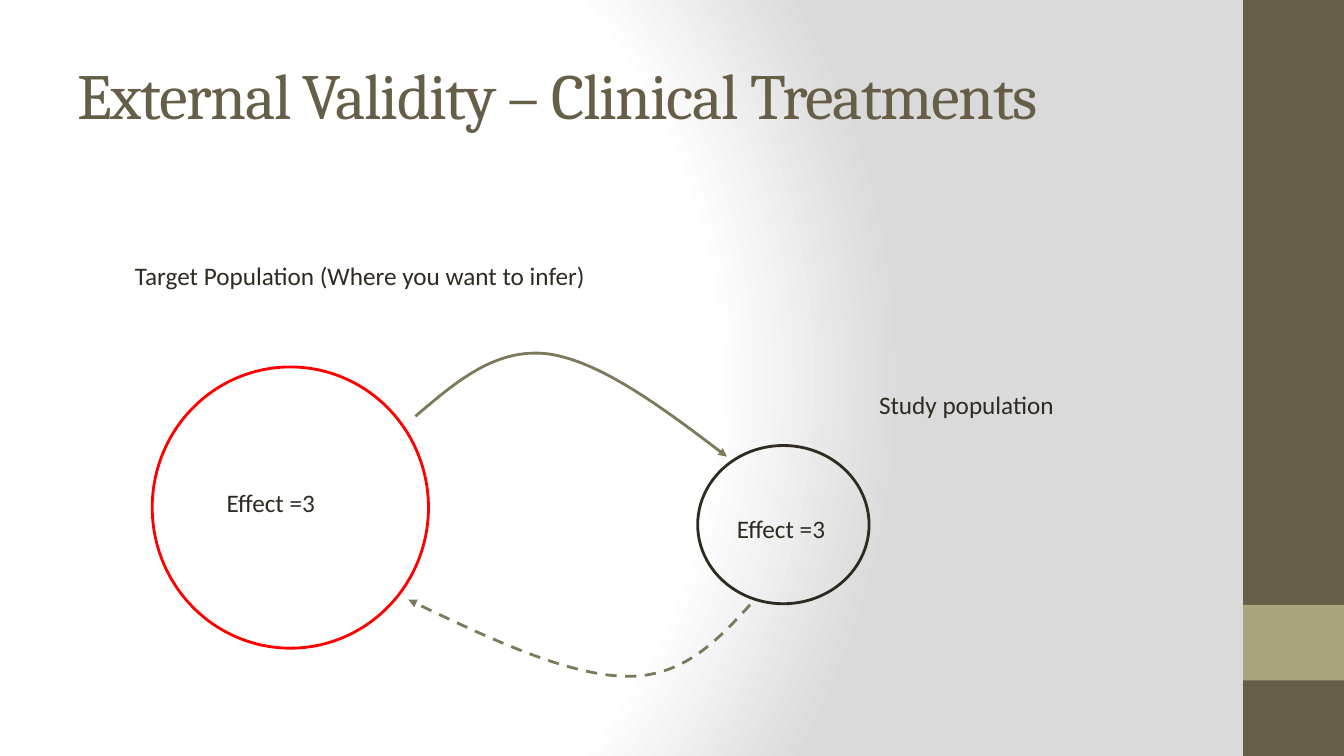
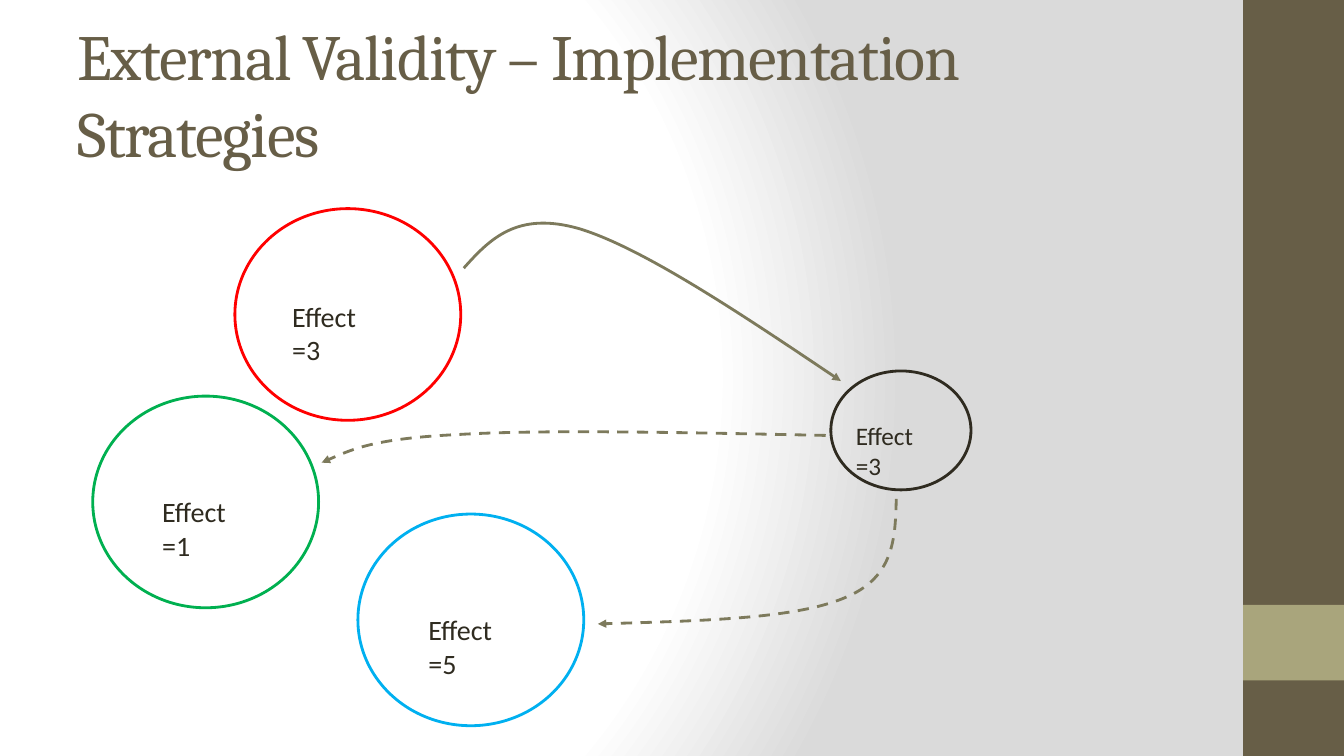
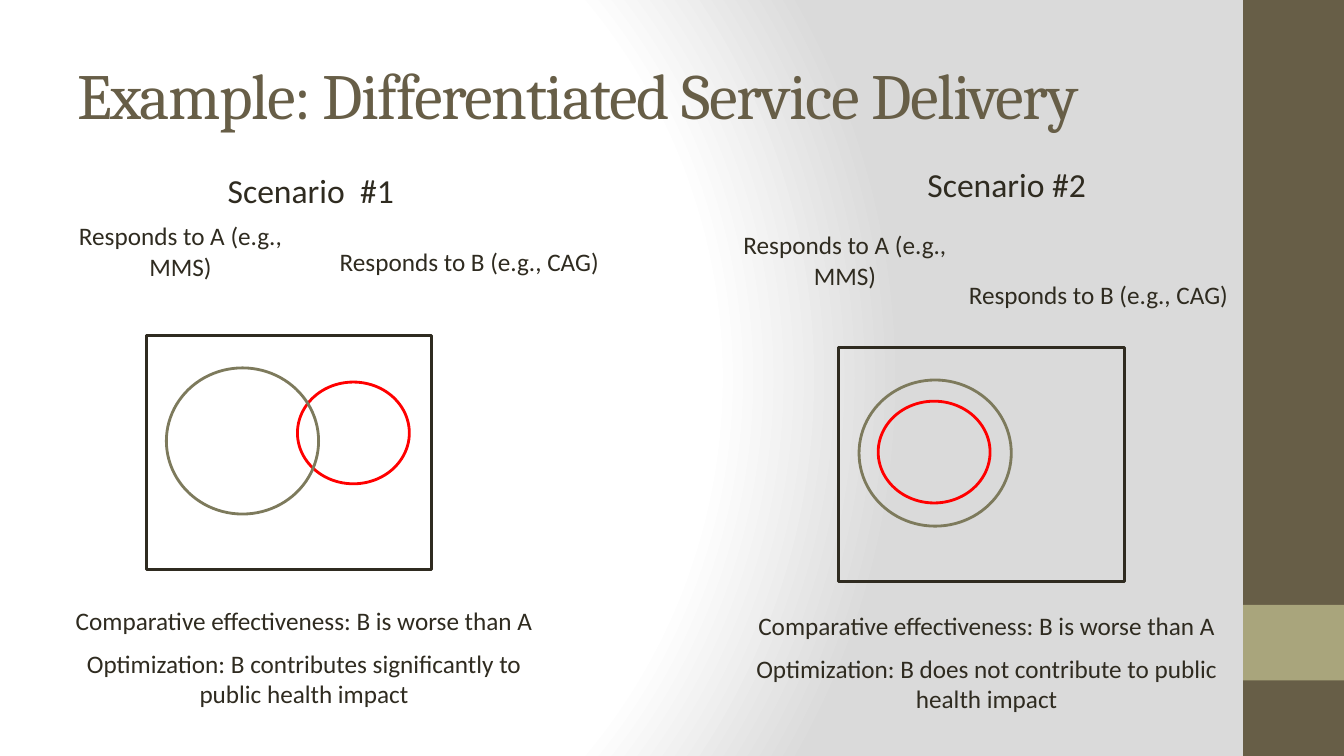
import pptx
import pptx.util
import pptx.dml.color
import pptx.enum.dml
import pptx.enum.shapes
import pptx.enum.text
import pptx.oxml
import pptx.oxml.ns

Inches = pptx.util.Inches
SHAPES = pptx.enum.shapes.MSO_SHAPE
ALIGN = pptx.enum.text.PP_ALIGN
ANCHOR = pptx.enum.text.MSO_ANCHOR

COLORS = {
    "title": "675E47", "accent": "A9A57C", "ink": "2F2B20", "olive": "7D7A5C",
    "red": "FF0000", "green": "00B050", "blue": "00B0F0",
    "white": "FFFFFF", "gray": "DADADA",
}
BACKGROUND_STOPS = [(0, "white"), (75, "white"), (100, "gray")]
BACKGROUND_FOCUS = {"l": 20, "t": 50, "r": 100, "b": 50}
BANDS = [((12.33, 0, 1, 7.5), "title"), ((12.33, 6, 1, 0.75), "accent")]
TITLE_AREA = (0.67, 0.3, 11.11, 1.25)

POPULATION_SLIDES = [
    {
        "title": "External Validity – Clinical Treatments",
        "circles": [((1.51, 3.64, 2.74, 2.79), "red"), ((6.92, 4.42, 1.7, 1.57), "ink")],
        "labels": [
            ("Target Population (Where you want to infer)", (1.19, 2.53, 4.76, 0.4),
             {"align": ALIGN.CENTER}),
            ("Study population", (8.62, 3.81, 1.96, 0.4), {"wrap": False}),
            ("Effect =3", (2.15, 4.79, 1.09, 0.4), {"wrap": False}),
            ("Effect =3", (7.21, 5.04, 1.09, 0.4), {"wrap": False}),
        ],
        "arrows": [
            ((4.12, 4.13), [((4.52, 3.79), (4.91, 3.45), (5.43, 3.51)),
                            ((5.94, 3.58), (6.58, 4.05), (7.21, 4.53))], False),
            ((7.44, 6), [((7.11, 6.36), (6.77, 6.72), (6.21, 6.71)),
                         ((5.64, 6.7), (4.84, 6.33), (4.05, 5.95))], True),
        ],
    },
    {
        "title": "External Validity – Implementation Strategies",
        "circles": [
            ((8.24, 3.68, 1.39, 1.18), "ink"), ((2.33, 2.07, 2.24, 2.1), "red"),
            ((0.92, 3.93, 2.24, 2.1), "green"), ((3.55, 5.1, 2.24, 2.1), "blue"),
        ],
        "labels": [
            ("Effect =3", (8.39, 4.12, 0.89, 0.3), {}),
            ("Effect =3", (2.8, 2.92, 0.97, 0.33), {"size": 20}),
            ("Effect =1", (1.51, 4.86, 0.97, 0.33), {"size": 20}),
            ("Effect =5", (4.15, 6.03, 0.97, 0.33), {"size": 20}),
        ],
        "arrows": [
            ((4.6, 2.66), [((4.86, 2.37), (5.13, 2.09), (5.75, 2.27)),
                           ((6.37, 2.46), (7.36, 3.12), (8.34, 3.78))], False),
            ((8.19, 4.32), [((6.79, 4.29), (5.39, 4.26), (4.56, 4.31)),
                            ((3.72, 4.35), (3.46, 4.47), (3.19, 4.59))], True),
            ((8.89, 4.95), [((8.88, 5.34), (8.87, 5.73), (8.38, 5.93)),
                            ((7.89, 6.14), (6.91, 6.16), (5.93, 6.19))], True),
        ],
    },
]

SCENARIO_TITLE = "Example: Differentiated Service Delivery"
RESPONSE_A = "Responds to A (e.g., MMS)"
RESPONSE_B = "Responds to B (e.g., CAG)"
COMPARISON = "Comparative effectiveness: B is worse than A"
SCENARIOS = [
    {"name": "Scenario  #1", "name_at": (2.16, 1.64), "a_at": (0.58, 2.14),
     "b_at": (3.24, 2.39), "frame_at": (1.45, 3.33), "b_circle_at": (2.95, 3.79),
     "verdict_at": (0.62, 5.96),
     "verdict": "Optimization: B contributes significantly to public health impact"},
    {"name": "Scenario #2", "name_at": (9.1, 1.58), "a_at": (7.17, 2.23),
     "b_at": (9.48, 2.72), "frame_at": (8.32, 3.45), "b_circle_at": (8.71, 3.98),
     "verdict_at": (7.39, 6.01),
     "verdict": "Optimization: B does not contribute to public health impact"},
]


def rgb(name):
    return pptx.dml.color.RGBColor.from_string(COLORS[name])


def add_text(slide, text, area, size=18, font="Calibri", color="ink", align=ALIGN.LEFT,
             anchor=ANCHOR.TOP, wrap=True, spacing=None):
    box = slide.shapes.add_textbox(*map(Inches, area))
    frame = box.text_frame
    frame.word_wrap = wrap
    frame.vertical_anchor = anchor
    para = frame.paragraphs[0]
    para.alignment = align
    span = para.add_run()
    span.text = text
    span.font.size = pptx.util.Pt(size)
    span.font.name = font
    span.font.color.rgb = rgb(color)
    if spacing is not None:
        span.font._element.set("spc", str(spacing * 100))


def style_outline(shape, color):
    shape.shadow.inherit = False
    shape.fill.background()
    shape.line.color.rgb = rgb(color)
    shape.line.width = pptx.util.Pt(2)


def add_outline(slide, kind, area, color):
    style_outline(slide.shapes.add_shape(kind, *map(Inches, area)), color)


def add_curved_arrow(slide, start, curves, dashed):
    builder = slide.shapes.build_freeform(*map(Inches, start))
    nodes = [tuple(map(Inches, curve[-1])) for curve in curves]
    builder.add_line_segments(nodes, close=False)
    arrow = builder.convert_to_shape()
    style_outline(arrow, "olive")
    segments = arrow._element.findall(".//" + pptx.oxml.ns.qn("a:lnTo"))
    for segment, curve in zip(segments, curves):
        points = "".join(
            f'<a:pt x="{Inches(x) - arrow.left}" y="{Inches(y) - arrow.top}"/>'
            for x, y in curve)
        bezier = pptx.oxml.parse_xml(
            f'<a:cubicBezTo {pptx.oxml.ns.nsdecls("a")}>{points}</a:cubicBezTo>')
        segment.getparent().replace(segment, bezier)
    if dashed:
        arrow.line.dash_style = pptx.enum.dml.MSO_LINE.DASH
    arrow.line._get_or_add_ln().append(pptx.oxml.parse_xml(
        f'<a:tailEnd {pptx.oxml.ns.nsdecls("a")} type="triangle"/>'))


def set_background(master):
    fill = master.background.fill
    fill.gradient()
    gradient = master.element.find(".//" + pptx.oxml.ns.qn("p:bg")).find(
        ".//" + pptx.oxml.ns.qn("a:gradFill"))
    stops = "".join(
        f'<a:gs pos="{position * 1000}"><a:srgbClr val="{COLORS[color]}"/></a:gs>'
        for position, color in BACKGROUND_STOPS)
    focus = " ".join(f'{side}="{share * 1000}"' for side, share in BACKGROUND_FOCUS.items())
    gradient.getparent().replace(gradient, pptx.oxml.parse_xml(
        f'<a:gradFill {pptx.oxml.ns.nsdecls("a")} rotWithShape="1"><a:gsLst>{stops}</a:gsLst>'
        f'<a:path path="circle"><a:fillToRect {focus}/></a:path></a:gradFill>'))


def add_page(deck, title):
    page = deck.slides.add_slide(deck.slide_layouts[6])
    for area, color in BANDS:
        band = page.shapes.add_shape(SHAPES.RECTANGLE, *map(Inches, area))
        band.shadow.inherit = False
        band.fill.solid()
        band.fill.fore_color.rgb = rgb(color)
        band.line.fill.background()
    add_text(page, title, TITLE_AREA, size=46, font="Cambria", color="title",
             anchor=ANCHOR.MIDDLE, spacing=-1)
    return page


def add_scenario(page, scenario):
    left, top = scenario["frame_at"]
    add_outline(page, SHAPES.OVAL, (*scenario["b_circle_at"], 1.11, 1.01), "red")
    add_outline(page, SHAPES.OVAL, (left + 0.2, top + 0.32, 1.51, 1.45), "olive")
    add_outline(page, SHAPES.RECTANGLE, (left, top, 2.83, 2.32), "ink")
    add_text(page, scenario["name"], (*scenario["name_at"], 1.87, 0.5), size=24, wrap=False)
    verdict_left, verdict_top = scenario["verdict_at"]
    for text, area, wrap in [
        (RESPONSE_A, (*scenario["a_at"], 2.42, 0.71), True),
        (RESPONSE_B, (*scenario["b_at"], 2.83, 0.4), True),
        (COMPARISON, (verdict_left, verdict_top, 4.79, 0.4), False),
        (scenario["verdict"], (verdict_left, verdict_top + 0.42, 4.79, 0.71), True),
    ]:
        add_text(page, text, area, align=ALIGN.CENTER, wrap=wrap)


def main():
    deck = pptx.Presentation()
    deck.slide_width = Inches(13.33)
    deck.slide_height = Inches(7.5)
    set_background(deck.slide_master)
    for content in POPULATION_SLIDES:
        page = add_page(deck, content["title"])
        for area, color in content["circles"]:
            add_outline(page, SHAPES.OVAL, area, color)
        for text, area, style in content["labels"]:
            add_text(page, text, area, **style)
        for start, curves, dashed in content["arrows"]:
            add_curved_arrow(page, start, curves, dashed)
    page = add_page(deck, SCENARIO_TITLE)
    for scenario in SCENARIOS:
        add_scenario(page, scenario)
    deck.save("out.pptx")


if __name__ == "__main__":
    main()
